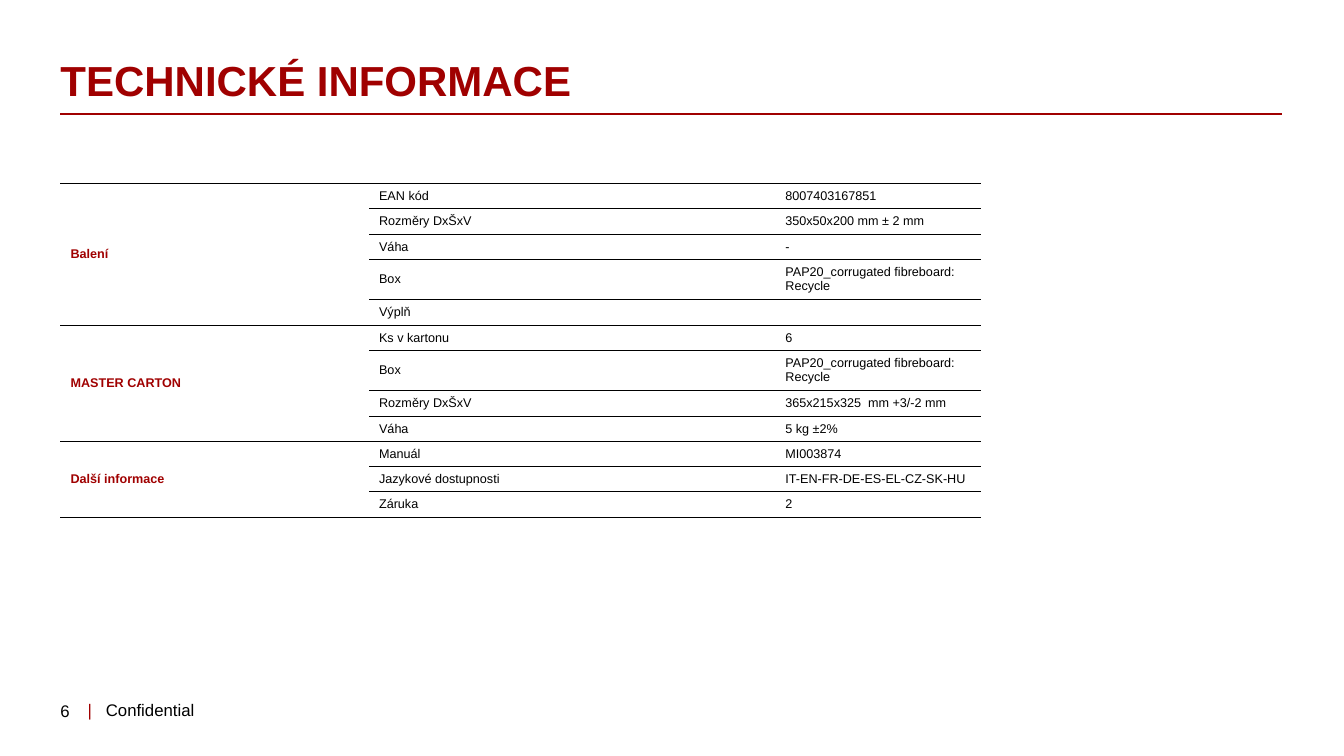
from lxml import etree
from pptx import Presentation
from pptx.dml.color import RGBColor
from pptx.enum.shapes import MSO_CONNECTOR
from pptx.enum.text import MSO_ANCHOR
from pptx.oxml.ns import qn
from pptx.util import Inches, Pt

STRAIGHT = MSO_CONNECTOR.STRAIGHT
TOP, MIDDLE = MSO_ANCHOR.TOP, MSO_ANCHOR.MIDDLE
RED = RGBColor(0xA0, 0x00, 0x00)
BLACK = RGBColor(0x00, 0x00, 0x00)
FONT = "Arial"
NO_GRID_STYLE = "{2D5ABB26-0587-4C30-8999-92F81FD0307C}"

COLUMN_WIDTHS = (3.06, 4.03, 2.04)
ROW_HEIGHT, TALL_ROW_HEIGHT = 0.24, 0.39
CARTON = "PAP20_corrugated fibreboard: Recycle"
SECTIONS = (
    ("Balení", (
        ("EAN kód", "8007403167851"),
        ("Rozměry DxŠxV", "350x50x200 mm ± 2 mm"),
        ("Váha", "-"),
        ("Box", CARTON),
        ("Výplň", ""),
    )),
    ("MASTER CARTON", (
        ("Ks v kartonu", "6"),
        ("Box", CARTON),
        ("Rozměry DxŠxV", "365x215x325  mm +3/-2 mm"),
        ("Váha", "5 kg ±2%"),
    )),
    ("Další informace", (
        ("Manuál", "MI003874"),
        ("Jazykové dostupnosti", "IT-EN-FR-DE-ES-EL-CZ-SK-HU"),
        ("Záruka", "2"),
    )),
)


class SlideBuilder:
    def __init__(self, slide):
        self.slide = slide

    def add_run(self, paragraph, text, size, color=BLACK, bold=False):
        run = paragraph.add_run()
        run.text = text
        run.font.name = FONT
        run.font.size = Pt(size)
        run.font.bold = bold
        run.font.color.rgb = color

    def rule(self, left, right, top):
        line = self.slide.shapes.add_connector(
            STRAIGHT, Inches(left), Inches(top), Inches(right), Inches(top))
        line.line.color.rgb = RED
        line.line.width = Pt(1)
        etree.SubElement(line._element.spPr, qn("a:effectLst"))

    def text(self, left, top, width, height, runs, size, bold=False,
             anchor=TOP, inset_left=0, inset_bottom=0, spacing=None, tab=None):
        box = self.slide.shapes.add_textbox(
            Inches(left), Inches(top), Inches(width), Inches(height))
        frame = box.text_frame
        frame.word_wrap = True
        frame.vertical_anchor = anchor
        frame.margin_left, frame.margin_bottom = Inches(inset_left), Inches(inset_bottom)
        frame.margin_top = frame.margin_right = 0
        paragraph = frame.paragraphs[0]
        if tab:
            tabs = etree.SubElement(paragraph._p.get_or_add_pPr(), qn("a:tabLst"))
            etree.SubElement(tabs, qn("a:tab"), pos=str(Inches(tab)), algn="l")
        if spacing:
            paragraph.line_spacing = Pt(spacing)
        for text, color in runs:
            self.add_run(paragraph, text, size, color, bold)

    def border(self, cell, *sides):
        properties = cell._tc.get_or_add_tcPr()
        for index, side in enumerate(sides):
            line = etree.Element(qn("a:" + side), w=str(Pt(0.75)))
            fill = etree.SubElement(line, qn("a:solidFill"))
            etree.SubElement(fill, qn("a:srgbClr"), val=str(BLACK))
            properties.insert(index, line)

    def cell_text(self, cell, text, color=BLACK, bold=False, anchor=MIDDLE):
        cell.vertical_anchor = anchor
        if text:
            self.add_run(cell.text_frame.paragraphs[0], text, 9, color, bold)

    def table(self, left, top, sections):
        rows = [row for _, section_rows in sections for row in section_rows]
        heights = [TALL_ROW_HEIGHT if value == CARTON else ROW_HEIGHT
                   for _, value in rows]
        frame = self.slide.shapes.add_table(
            len(rows), len(COLUMN_WIDTHS), Inches(left), Inches(top),
            Inches(sum(COLUMN_WIDTHS)), Inches(sum(heights)))
        table = frame.table
        table.first_row = table.horz_banding = False
        table._tbl.tblPr.find(qn("a:tableStyleId")).text = NO_GRID_STYLE
        for column, width in zip(table.columns, COLUMN_WIDTHS):
            column.width = Inches(width)
        for row, height in zip(table.rows, heights):
            row.height = Inches(height)

        # Labels and values, ruled above and below
        for index, (label, value) in enumerate(rows):
            self.cell_text(table.cell(index, 1), label)
            self.cell_text(table.cell(index, 2), value)
            for column in (1, 2):
                self.border(table.cell(index, column), "lnT", "lnB")

        # Section names, merged down the first column
        start = 0
        for name, section_rows in sections:
            first = table.cell(start, 0)
            last = table.cell(start + len(section_rows) - 1, 0)
            first.merge(last)
            self.cell_text(first, name, RED, True)
            self.border(first, "lnT", "lnB")
            self.border(last, "lnB")
            start += len(section_rows)

        # Clear fills; empty cells keep the small text size
        for cell in table.iter_cells():
            cell.fill.background()
            if not cell.text_frame.text:
                paragraph = cell.text_frame.paragraphs[0]
                etree.SubElement(paragraph._p, qn("a:endParaRPr"), sz="900")


def main():
    presentation = Presentation()
    presentation.slide_width = Inches(13.33)
    presentation.slide_height = Inches(7.5)
    slide = presentation.slides.add_slide(presentation.slide_layouts[6])
    builder = SlideBuilder(slide)

    # Title with rule
    builder.rule(0.6, 12.72, 1.13)
    builder.text(0.6, 0.6, 12.13, 0.45, [("TECHNICKÉ INFORMACE", RED)], 30,
                 bold=True, inset_bottom=0.05, spacing=32)

    # Technical data
    builder.table(0.6, 1.82, SECTIONS)

    # Footer
    builder.text(0.8, 6.85, 1.3, 0.39, [("|\t", RED), ("Confidential", BLACK)],
                 12, anchor=MIDDLE, inset_left=0.07, tab=0.18)
    builder.text(0.6, 6.95, 0.32, 0.3, [("6", BLACK)], 12)

    presentation.save("out.pptx")


if __name__ == "__main__":
    main()
